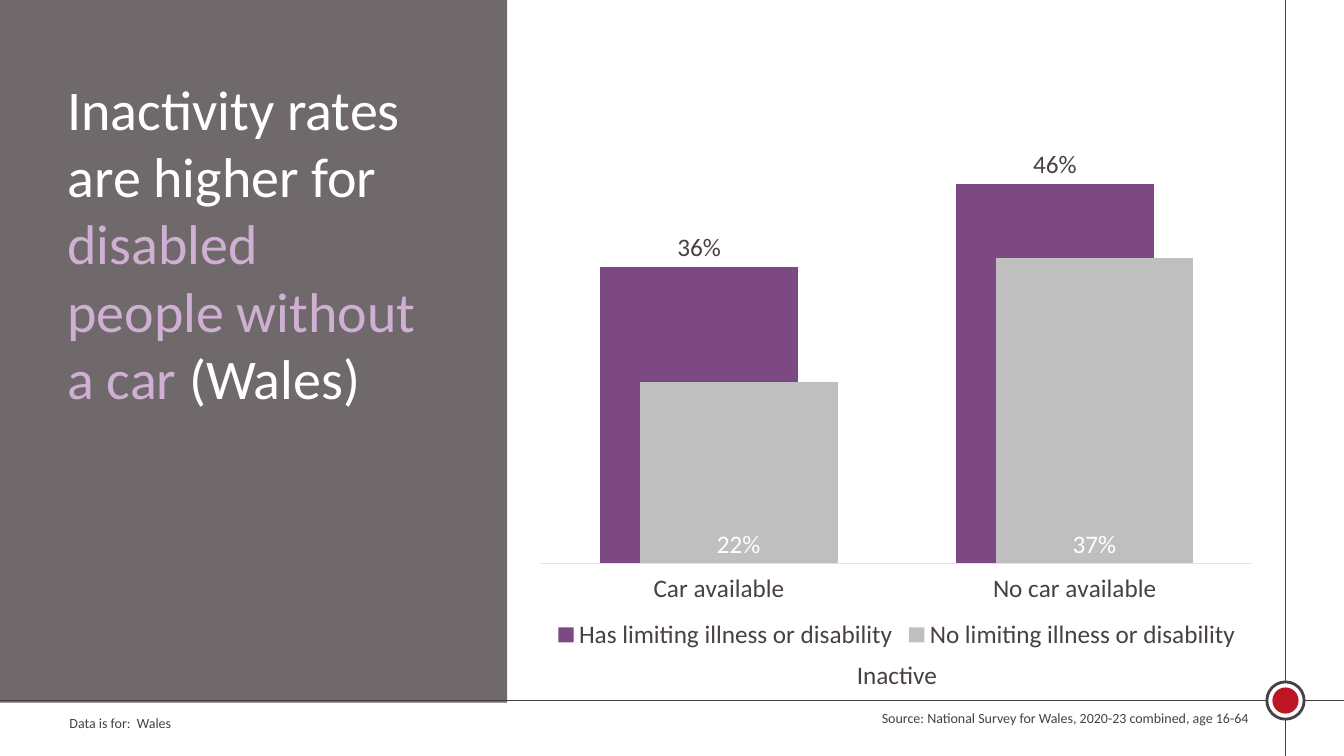
"""Build a slide on inactivity rates by disability and car access in Wales."""
from lxml.etree import SubElement
from pptx import Presentation
from pptx.chart.data import CategoryChartData
from pptx.dml.color import RGBColor
from pptx.enum.chart import XL_CHART_TYPE, XL_LABEL_POSITION, XL_LEGEND_POSITION
from pptx.enum.chart import XL_TICK_LABEL_POSITION, XL_TICK_MARK
from pptx.enum.shapes import MSO_CONNECTOR, MSO_SHAPE
from pptx.enum.text import MSO_ANCHOR, MSO_AUTO_SIZE, PP_ALIGN
from pptx.oxml import parse_xml
from pptx.oxml.ns import qn
from pptx.util import Inches, Pt

FONT = "Calibri"
COLORS = {"dark": "484043", "white": "FFFFFF", "lilac": "CFB0D3",
          "red": "BD1622", "purple": "7C4982", "grey": "BFBFBF", "axis": "E5E1E3"}
WIDE, HIGH = 13.33, 7.5
CROSS = (12.75, 6.95)

TITLE = [("Inactivity rates are higher for ", "white"),
         ("disabled people without a car ", "lilac"),
         ("(Wales)", "white")]
NOTES = [("Data is for:  Wales", (0.59, 7.04, 4.39, 0.27), 10, PP_ALIGN.LEFT),
         ("Source: National Survey for Wales, 2020-23 combined, age 16-64",
          (8.32, 6.99, 4.16, 0.27), 10, PP_ALIGN.RIGHT),
         ("Inactive", (8.4, 6.49, 1.22, 0.4), 18, PP_ALIGN.LEFT)]
RINGS = [(0.37, "white", "dark"), (0.26, "red", None)]
CATS = ["Car available", "No car available"]
SERIES = [("Has limiting illness or disability", (0.36, 0.46), "purple",
           "dark", XL_LABEL_POSITION.OUTSIDE_END),
          ("No limiting illness or disability", (0.22, 0.37), "grey",
           "white", XL_LABEL_POSITION.INSIDE_BASE)]
CHART = (5.22, 1.45, 7.35, 5.05)
PLOT = {"x": 0.02, "y": 0.01, "w": 0.96, "h": 0.81}


def rgb(name):
    return RGBColor.from_string(COLORS[name])


def style(font, size, color):
    font.name, font.size, font.bold = FONT, Pt(size), False
    font.color.rgb = rgb(color)


def add_shape(slide, kind, box, fill, line=None):
    shape = slide.shapes.add_shape(kind, *map(Inches, box))
    shape.shadow.inherit = False
    shape.fill.solid()
    shape.fill.fore_color.rgb = rgb(fill)
    if line:
        shape.line.color.rgb = rgb(line)
        shape.line.width = Pt(2)
    else:
        shape.line.fill.background()
    return shape


def add_frame(slide):
    x, y = CROSS
    for ends in ((x, 0, x, HIGH), (0, y, WIDE, y)):
        line = slide.shapes.add_connector(MSO_CONNECTOR.STRAIGHT, *map(Inches, ends))
        line.line.color.rgb = rgb("dark")
        line.line.width = Pt(1)
        SubElement(line.element.spPr, qn("a:effectLst"))
    for size, fill, edge in RINGS:
        box = (x - size / 2, y - size / 2, size, size)
        add_shape(slide, MSO_SHAPE.OVAL, box, fill, edge)
    panel = add_shape(slide, MSO_SHAPE.RECTANGLE, (-0.01, 0, 5.04, 6.97), "dark")
    tint = panel.element.spPr.find(qn("a:solidFill"))[0]
    SubElement(tint, qn("a:alpha"), val="78000")


def add_title(slide):
    title = slide.shapes.title
    title.element.getparent().append(title.element)
    title.left, title.top, title.width, title.height = map(Inches, (0.57, 0.69, 3.73, 3.77))
    frame = title.text_frame
    frame.word_wrap = True
    frame.auto_size = MSO_AUTO_SIZE.NONE
    frame.vertical_anchor = MSO_ANCHOR.TOP
    para = frame.paragraphs[0]
    para.alignment = PP_ALIGN.LEFT
    for text, color in TITLE:
        run = para.add_run()
        run.text = text
        style(run.font, 40, color)


def add_note(slide, text, box, size, align):
    frame = slide.shapes.add_textbox(*map(Inches, box)).text_frame
    frame.word_wrap = True
    frame.text = text
    para = frame.paragraphs[0]
    para.alignment = align
    style(para.runs[0].font, size, "dark")


def set_plot(chart):
    area = chart.element.chart.plotArea
    for old in area.findall(qn("c:layout")):
        area.remove(old)
    space = "http://schemas.openxmlformats.org/drawingml/2006/chart"
    rules = {"layoutTarget": "inner", "xMode": "edge", "yMode": "edge", **PLOT}
    tags = "".join(f'<c:{key} val="{val}"/>' for key, val in rules.items())
    area.insert(0, parse_xml(
        f'<c:layout xmlns:c="{space}"><c:manualLayout>{tags}</c:manualLayout></c:layout>'))


def add_chart(slide):
    data = CategoryChartData(number_format="0%")
    data.categories = CATS
    for name, vals, *_ in SERIES:
        data.add_series(name, vals)
    chart = slide.shapes.add_chart(
        XL_CHART_TYPE.COLUMN_CLUSTERED, *map(Inches, CHART), data).chart
    style(chart.font, 18, "dark")
    chart.has_title = False
    chart.has_legend = True
    chart.legend.position = XL_LEGEND_POSITION.BOTTOM
    chart.legend.include_in_layout = False
    style(chart.legend.font, 18, "dark")

    cat, val = chart.category_axis, chart.value_axis
    cat.major_tick_mark = XL_TICK_MARK.NONE
    cat.tick_label_position = XL_TICK_LABEL_POSITION.LOW
    cat.format.line.color.rgb = rgb("axis")
    cat.format.line.width = Pt(0.75)
    style(cat.tick_labels.font, 18, "dark")
    val.minimum_scale, val.maximum_scale = 0, 0.5
    val.has_major_gridlines = False
    val.visible = False

    plot = chart.plots[0]
    plot.gap_width, plot.overlap = 60, 80
    plot.vary_by_categories = False
    for bars, (_, _, fill, ink, place) in zip(plot.series, SERIES):
        bars.format.fill.solid()
        bars.format.fill.fore_color.rgb = rgb(fill)
        labels = bars.data_labels
        labels.show_value = True
        labels.number_format = "0%"
        labels.number_format_is_linked = False
        labels.position = place
        style(labels.font, 18, ink)
    set_plot(chart)


def main():
    deck = Presentation()
    deck.slide_width, deck.slide_height = Inches(WIDE), Inches(HIGH)
    slide = deck.slides.add_slide(deck.slide_layouts[5])
    add_frame(slide)
    add_title(slide)
    add_chart(slide)
    for note in NOTES:
        add_note(slide, *note)
    deck.save("out.pptx")


if __name__ == "__main__":
    main()
